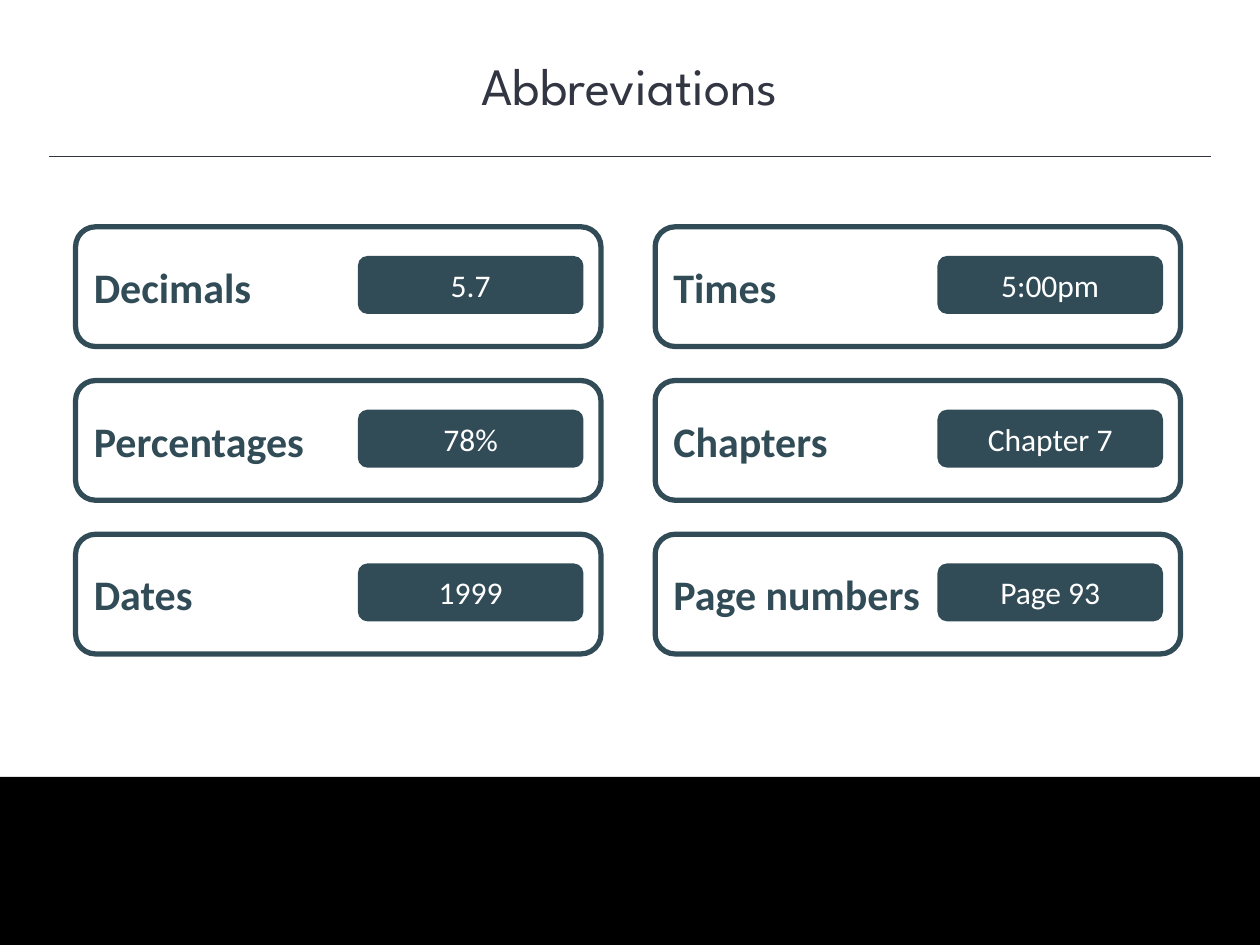
import pptx
import pptx.dml.color
import pptx.enum.shapes
import pptx.enum.text
import pptx.oxml.ns
import pptx.util
from lxml import etree

Pt = pptx.util.Pt
SHAPE = pptx.enum.shapes.MSO_SHAPE
ALIGN = pptx.enum.text.PP_ALIGN
MIDDLE = pptx.enum.text.MSO_ANCHOR.MIDDLE

COLORS = {"teal": "314C57", "ink": "323542", "white": "FFFFFF", "black": "000000"}

CARDS = [
    [("Decimals", "5.7"), ("Percentages", "78%"), ("Dates", "1999")],
    [("Times", "5:00pm"), ("Chapters", "Chapter 7"), ("Page numbers", "Page 93")],
]
LEFT, TOP = 43.2, 129.6
STEP_X, STEP_Y = 331.2, 87.84


def color(name):
    return pptx.dml.color.RGBColor.from_string(COLORS[name])


def add_text(shape, text, size, tint, align, face="Calibri", bold=False):
    frame = shape.text_frame
    frame.word_wrap = True
    frame.vertical_anchor = MIDDLE
    para = frame.paragraphs[0]
    para.alignment = align
    run = para.add_run()
    run.text = text
    run.font.name = face
    run.font.size = Pt(size)
    run.font.bold = bold
    run.font.color.rgb = color(tint)


def add_box(slide, kind, x, y, width, height, fill, edge=None):
    box = slide.shapes.add_shape(kind, Pt(x), Pt(y), Pt(width), Pt(height))
    box.shadow.inherit = False
    box.fill.solid()
    box.fill.fore_color.rgb = color(fill)
    if edge:
        box.line.color.rgb = color(edge)
        box.line.width = Pt(3)
    else:
        box.line.fill.background()
    return box


def add_title(slide, text):
    box = slide.shapes.add_textbox(Pt(0), Pt(26.64), Pt(720), Pt(43.92))
    add_text(box, text, 30, "ink", ALIGN.CENTER, "League Spartan")
    box.text_frame.vertical_anchor = pptx.enum.text.MSO_ANCHOR.TOP


def add_rule(slide):
    kind = pptx.enum.shapes.MSO_CONNECTOR.STRAIGHT
    rule = slide.shapes.add_connector(kind, Pt(28), Pt(89.5), Pt(692), Pt(89.5))
    rule.line.color.rgb = color("ink")
    rule.line.width = Pt(1)
    etree.SubElement(rule.element.spPr, pptx.oxml.ns.qn("a:effectLst"))


def add_card(slide, x, y, label, sample):
    card = add_box(slide, SHAPE.ROUNDED_RECTANGLE, x, y, 300.24, 68.4, "white", "teal")
    add_text(card, label, 24, "teal", ALIGN.LEFT, bold=True)
    pill = add_box(slide, SHAPE.ROUNDED_RECTANGLE, x + 161.28, y + 16.7, 128.88, 33.12, "teal")
    add_text(pill, sample, 18, "white", ALIGN.CENTER)


def main():
    deck = pptx.Presentation()
    deck.slide_width, deck.slide_height = Pt(720), Pt(540)
    slide = deck.slides.add_slide(deck.slide_layouts[6])
    add_title(slide, "Abbreviations")
    add_box(slide, SHAPE.RECTANGLE, 0, 444, 720, 96, "black")
    add_rule(slide)
    for col, cards in enumerate(CARDS):
        for row, (label, sample) in enumerate(cards):
            add_card(slide, LEFT + col * STEP_X, TOP + row * STEP_Y, label, sample)
    deck.save("out.pptx")


if __name__ == "__main__":
    main()
